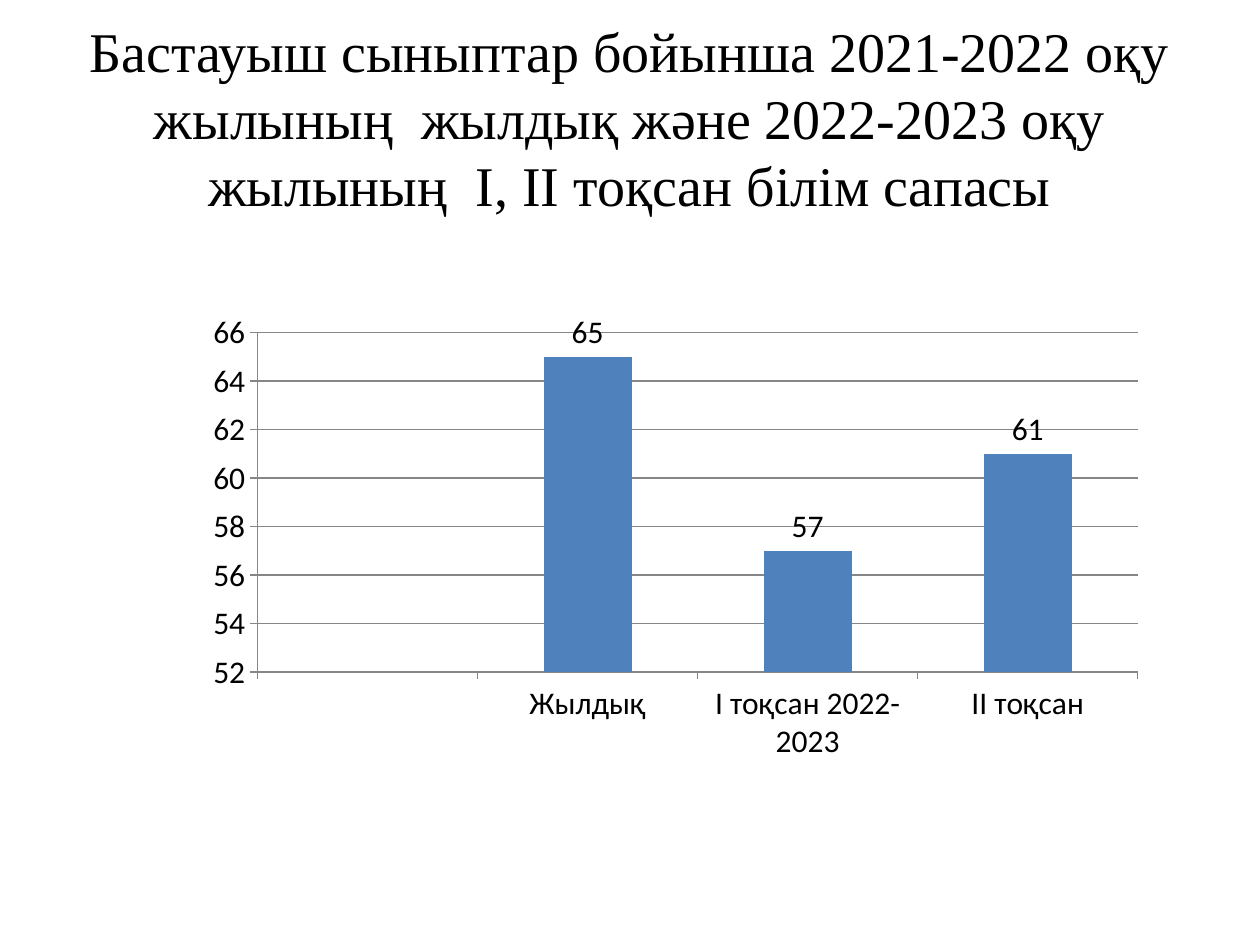
"""Build a slide comparing primary school education quality by term."""
from dataclasses import dataclass

from pptx import Presentation
from pptx.chart.data import CategoryChartData
from pptx.dml.color import RGBColor
from pptx.enum.chart import XL_CHART_TYPE as ChartType, XL_LABEL_POSITION as LabelPosition
from pptx.enum.chart import XL_TICK_MARK as TickMark
from pptx.enum.text import MSO_ANCHOR as Anchor, PP_ALIGN as Align
from pptx.util import Emu, Pt


@dataclass(frozen=True)
class Theme:
    text: RGBColor = RGBColor.from_string("000000")
    bar: RGBColor = RGBColor.from_string("4F81BD")
    line: RGBColor = RGBColor.from_string("868686")
    title_font: str = "Times New Roman"
    chart_font: str = "Calibri"
    title_size: Pt = Pt(32)
    chart_size: Pt = Pt(18)
    line_width: Pt = Pt(0.75)


def px(*lengths):
    return [Emu(round(length * 914400 / 126)) for length in lengths]


theme = Theme()
presentation = Presentation()
presentation.slide_width, presentation.slide_height = px(1260, 945)
slide = presentation.slides.add_slide(presentation.slide_layouts[6])

title = slide.shapes.add_textbox(*px(63, 38, 1134, 158)).text_frame
title.word_wrap = True
title.vertical_anchor = Anchor.MIDDLE
paragraph = title.paragraphs[0]
paragraph.text = (
    "Бастауыш сыныптар бойынша 2021-2022 оқу жылының  жылдық "
    "және 2022-2023 оқу жылының  І, ІІ тоқсан білім сапасы"
)
paragraph.alignment = Align.CENTER
paragraph.font.name = theme.title_font
paragraph.font.size = theme.title_size
paragraph.font.color.rgb = theme.text

quality = CategoryChartData()
quality.categories = ["", "Жылдық", "І тоқсан 2022-2023", "ІІ тоқсан"]
quality.add_series("Series 1", [None, 65, 57, 61])
chart = slide.shapes.add_chart(
    ChartType.COLUMN_CLUSTERED, *px(194, 304, 963, 466), quality
).chart
chart.has_legend = False
chart.has_title = False
chart.font.name = theme.chart_font
chart.font.size = theme.chart_size
chart.font.color.rgb = theme.text

plot = chart.plots[0]
plot.gap_width = 150
plot.vary_by_categories = False
series = plot.series[0]
series.format.fill.solid()
series.format.fill.fore_color.rgb = theme.bar
labels = series.data_labels
labels.show_value = True
labels.position = LabelPosition.OUTSIDE_END

value_axis = chart.value_axis
value_axis.minimum_scale, value_axis.maximum_scale = 52, 66
value_axis.major_unit = 2
value_axis.has_major_gridlines = True
for axis in (chart.category_axis, value_axis):
    axis.major_tick_mark = TickMark.OUTSIDE
    axis.minor_tick_mark = TickMark.NONE
for ruled in (chart.category_axis, value_axis, value_axis.major_gridlines):
    ruled.format.line.color.rgb = theme.line
    ruled.format.line.width = theme.line_width

presentation.save("out.pptx")
